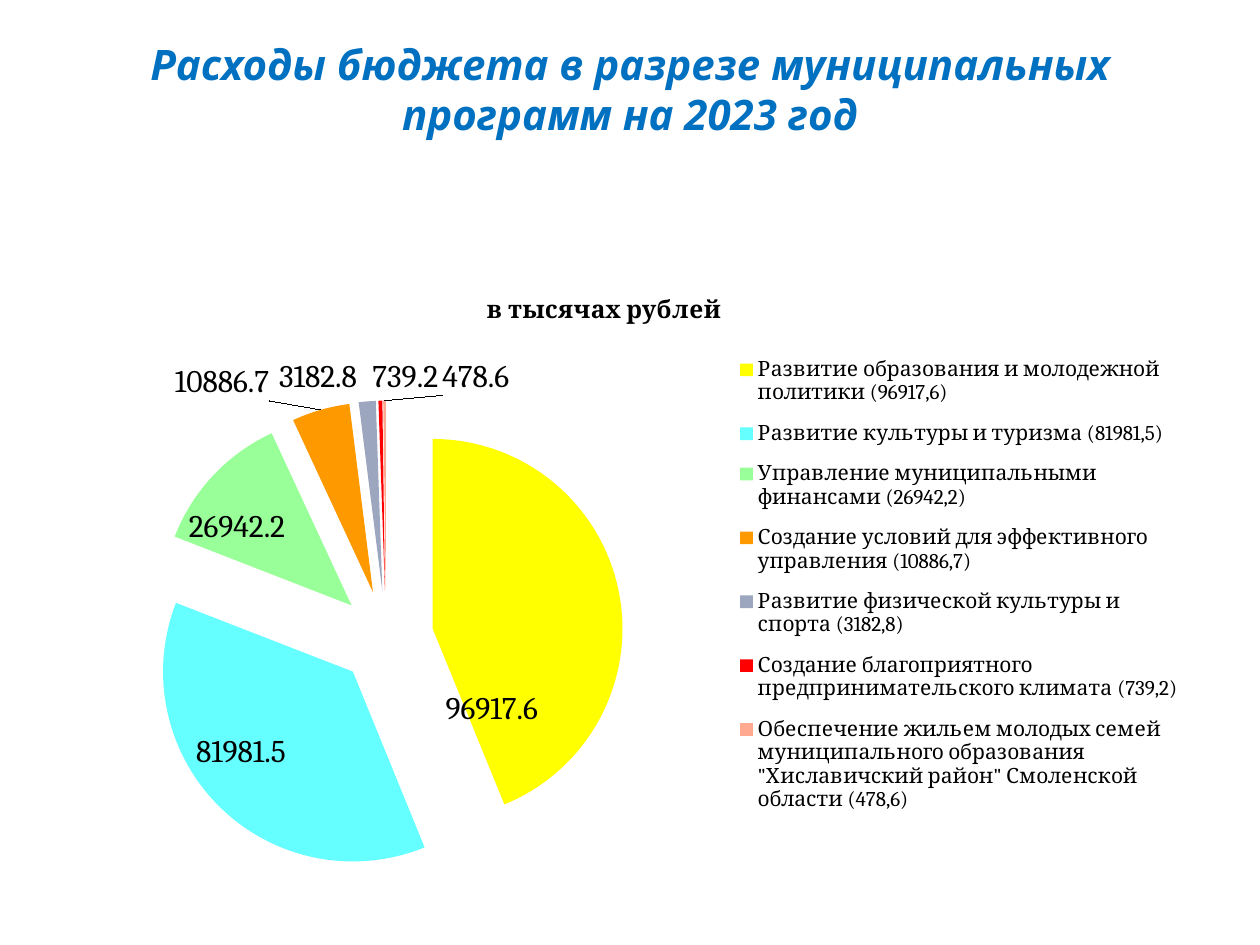
from dataclasses import dataclass

from lxml import etree
from pptx import Presentation
from pptx import util as u
from pptx.chart.data import CategoryChartData
from pptx.dml.color import RGBColor
from pptx.enum import chart as ch, text
from pptx.oxml.ns import qn


@dataclass(frozen=True)
class Theme:
    heading_font: str = "Noto Sans"
    chart_font: str = "Cambria"
    heading: str = "0070C0"
    ink: str = "000000"
    heading_size: int = 24
    label_size: int = 18
    caption_size: int = 14
    legend_size: int = 12


THEME = Theme()
HEADING = "Расходы бюджета в разрезе муниципальных программ на 2023 год"
UNITS = "в тысячах рублей"

# Programme, spending, slice colour, label shift from the slice centre
PROGRAMMES = [
    ("Развитие образования и молодежной политики (96917,6)",
     96917.6, "FFFF00", (-0.03, 0.15)),
    ("Развитие культуры и туризма (81981,5)",
     81981.5, "66FFFF", (-0.04, 0.02)),
    ("Управление муниципальными финансами (26942,2)",
     26942.2, "99FF99", (-0.04, -0.02)),
    ("Создание условий для эффективного управления (10886,7)",
     10886.7, "FF9900", (-0.11, -0.18)),
    ("Развитие физической культуры и спорта (3182,8)",
     3182.8, "9CA6BF", (-0.05, -0.18)),
    ("Создание благоприятного предпринимательского климата (739,2)",
     739.2, "FF0000", (0.02, -0.18)),
    ("Обеспечение жильем молодых семей муниципального образования "
     "\"Хиславичский район\" Смоленской области (478,6)",
     478.6, "FFAA90", (0.08, -0.18)),
]


def style(font, name, size, colour, bold=False, italic=False):
    font.name, font.size = name, u.Pt(size)
    font.bold, font.italic = bold, italic
    font.color.rgb = RGBColor.from_string(colour)


def place(part, index, x, y, w=None, h=None, inner=False):
    """Give a chart part a manual layout, in fractions of the chart."""
    for old in part.findall(qn("c:layout")):
        part.remove(old)
    layout = etree.Element(qn("c:layout"))
    manual = etree.SubElement(layout, qn("c:manualLayout"))
    entries = [("layoutTarget", "inner")] if inner else []
    if part.tag != qn("c:dLbl"):
        entries += [("xMode", "edge"), ("yMode", "edge")]
    entries += [("x", x), ("y", y)]
    if w is not None:
        entries += [("w", w), ("h", h)]
    for tag, value in entries:
        etree.SubElement(manual, qn(f"c:{tag}")).set("val", str(value))
    part.insert(index, layout)


def add_heading(slide):
    box = slide.shapes.add_textbox(
        u.Inches(0.5), u.Inches(0.16), u.Inches(9), u.Inches(1.09))
    frame = box.text_frame
    frame.word_wrap = True
    frame.vertical_anchor = text.MSO_ANCHOR.MIDDLE
    paragraph = frame.paragraphs[0]
    paragraph.alignment = text.PP_ALIGN.CENTER
    run = paragraph.add_run()
    run.text = HEADING
    style(run.font, THEME.heading_font, THEME.heading_size, THEME.heading,
          bold=True, italic=True)


def add_spending_pie(slide):
    data = CategoryChartData(number_format="General")
    data.categories = [name for name, *_ in PROGRAMMES]
    data.add_series(UNITS, [amount for _, amount, *_ in PROGRAMMES])
    chart = slide.shapes.add_chart(
        ch.XL_CHART_TYPE.PIE, u.Inches(0.5), u.Inches(2.03),
        u.Inches(9), u.Inches(5.23), data).chart
    style(chart.font, THEME.chart_font, THEME.label_size, THEME.ink)

    # Caption
    chart.has_title = True
    caption = chart.chart_title.text_frame.paragraphs[0].add_run()
    caption.text = UNITS
    style(caption.font, THEME.chart_font, THEME.caption_size, THEME.ink,
          bold=True)
    place(chart.chart_title._element, 1, 0.37, 0.05)

    # Legend
    chart.has_legend = True
    legend = chart.legend
    legend.position = ch.XL_LEGEND_POSITION.RIGHT
    legend.include_in_layout = False
    style(legend.font, THEME.chart_font, THEME.legend_size, THEME.ink)
    place(legend._element, 1, 0.59, 0.13, 0.4, 0.74)

    # Slices and their values
    plot = chart.plots[0]
    plot.vary_by_categories = True
    place(chart._chartSpace.chart.plotArea, 0, 0.075, 0.22, 0.42, 0.72,
          inner=True)
    spending = plot.series[0]
    explosion = etree.Element(qn("c:explosion"))
    explosion.set("val", "25")
    spending._element.find(qn("c:tx")).addnext(explosion)
    labels = spending.data_labels
    labels.show_value = True
    style(labels.font, THEME.chart_font, THEME.label_size, THEME.ink)
    for i, (_, _, colour, shift) in enumerate(PROGRAMMES):
        point = spending.points[i]
        point.format.fill.solid()
        point.format.fill.fore_color.rgb = RGBColor.from_string(colour)
        label = point.data_label
        style(label.font, THEME.chart_font, THEME.label_size, THEME.ink)
        label.position = ch.XL_LABEL_POSITION.CENTER
        place(label._dLbl, 1, *shift)


def main():
    deck = Presentation()
    deck.slide_width, deck.slide_height = u.Inches(10), u.Inches(7.5)
    slide = deck.slides.add_slide(deck.slide_layouts[6])
    add_heading(slide)
    add_spending_pie(slide)
    deck.save("out.pptx")


if __name__ == "__main__":
    main()
